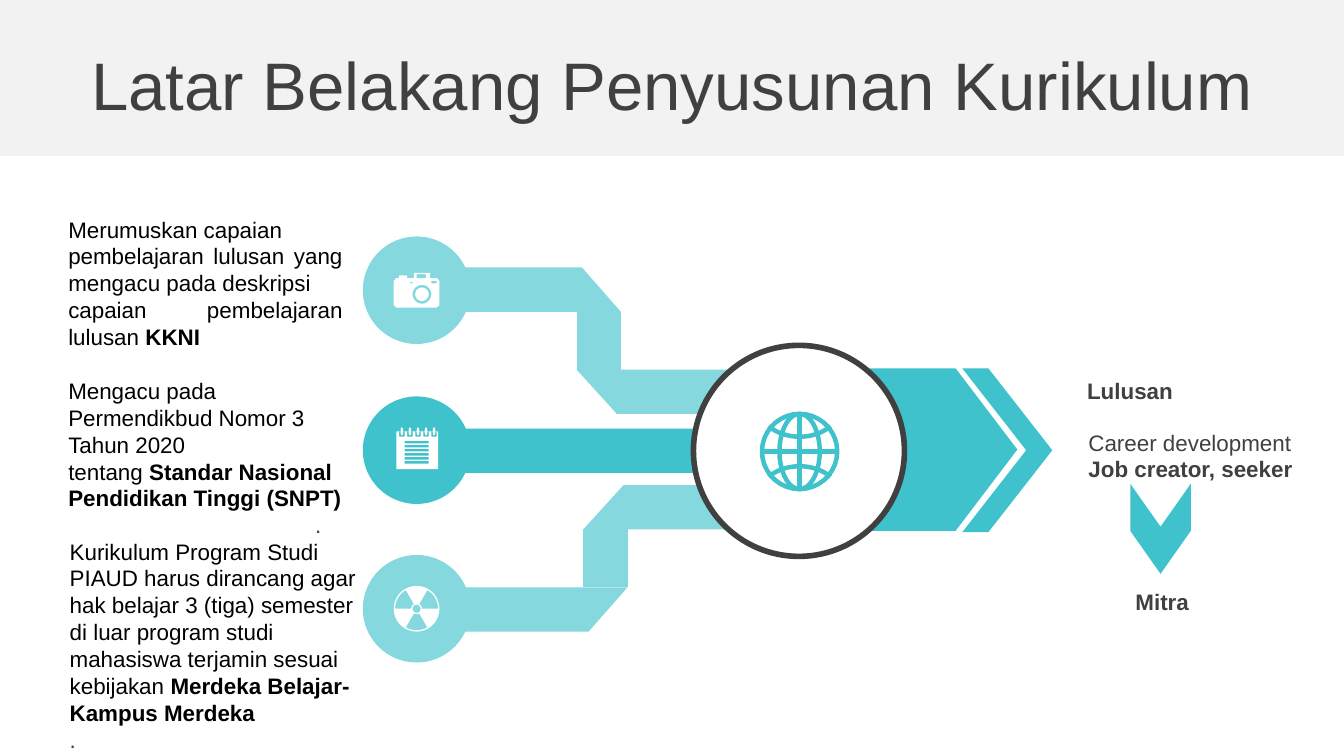
"""Build the slide on the background to the curriculum design."""
import math

import pptx
import pptx.dml.color
import pptx.enum.shapes
import pptx.enum.text
import pptx.util

Inches = pptx.util.Inches
RGBColor = pptx.dml.color.RGBColor
SHAPE = pptx.enum.shapes.MSO_SHAPE
ALIGN = pptx.enum.text.PP_ALIGN

BAND = RGBColor(0xF2, 0xF2, 0xF2)
DARK = RGBColor(0x40, 0x40, 0x40)
BLACK = RGBColor(0, 0, 0)
WHITE = RGBColor(0xFF, 0xFF, 0xFF)
TEAL = RGBColor(0x3F, 0xC2, 0xCB)
PALE = RGBColor(0x85, 0xD8, 0xDE)


def add_text(paragraph, text, size=12, color=BLACK, bold=False, font="Arial"):
    run = paragraph.add_run()
    run.text = text
    run.font.name = font
    run.font.size = pptx.util.Pt(size)
    run.font.bold = bold
    run.font.color.rgb = color


def arc(x, y, rx, ry, start=0, sweep=360, steps=36):
    angles = [math.radians(start + sweep * i / steps) for i in range(steps + 1)]
    return [(x + rx * math.cos(a), y + ry * math.sin(a)) for a in angles]


def box(left, top, right, bottom, cut=0):
    return [(left + cut, top), (right - cut, top), (right, top + cut), (right, bottom - cut),
            (right - cut, bottom), (left + cut, bottom), (left, bottom - cut), (left, top + cut)]


class Deck:
    def __init__(self):
        self.presentation = pptx.Presentation()
        self.presentation.slide_width = Inches(10)
        self.presentation.slide_height = Inches(10) * 9 // 16
        self.slide = self.presentation.slides.add_slide(self.presentation.slide_layouts[5])

    def paint(self, shape, fill, line=None, width=0):
        shape.shadow.inherit = False
        if fill is None:
            shape.fill.background()
        else:
            shape.fill.solid()
            shape.fill.fore_color.rgb = fill
        if line is None:
            shape.line.fill.background()
        else:
            shape.line.color.rgb = line
            shape.line.width = pptx.util.Pt(width)
        return shape

    def shape(self, kind, place, fill, adjust=None, turn=0, **outline):
        shape = self.slide.shapes.add_shape(kind, *map(Inches, place))
        if adjust is not None:
            shape.adjustments[0] = adjust
        shape.rotation = turn
        return self.paint(shape, fill, **outline)

    def freeform(self, contours, fill=None, close=True, **outline):
        contours = [[(Inches(x), Inches(y)) for x, y in points] for points in contours]
        builder = self.slide.shapes.build_freeform(*contours[0][0])
        for number, points in enumerate(contours):
            if number:
                builder.move_to(*points[0])
            builder.add_line_segments(points[1:], close=close)
        return self.paint(builder.convert_to_shape(), fill, **outline)

    def title(self, text):
        title = self.slide.shapes.title
        title.left, title.top, title.width, title.height = map(Inches, (0, 0.31, 10, 0.63))
        frame = title.text_frame
        frame.auto_size = pptx.enum.text.MSO_AUTO_SIZE.NONE
        frame.vertical_anchor = pptx.enum.text.MSO_ANCHOR.MIDDLE
        frame.paragraphs[0].alignment = ALIGN.CENTER
        add_text(frame.paragraphs[0], text, size=36, color=DARK)
        band = self.shape(SHAPE.RECTANGLE, (0, 0, 10, 1.16), BAND)
        title.element.addprevious(band.element)

    def text(self, place, paragraphs, align=ALIGN.LEFT):
        frame = self.slide.shapes.add_textbox(*map(Inches, place)).text_frame
        frame.word_wrap = True
        frame.vertical_anchor = pptx.enum.text.MSO_ANCHOR.MIDDLE
        for number, runs in enumerate(paragraphs):
            paragraph = frame.add_paragraph() if number else frame.paragraphs[0]
            paragraph.alignment = align
            for text, style in runs:
                add_text(paragraph, text, **style)
        return frame

    def arm(self, start, knee, end, flip=False):
        def level(y):
            return 6.69 - y if flip else y

        corners = [
            [(start, 1.99), (knee + 0.04, 1.99), (knee + 0.33, 2.32), (start, 2.32)],
            [(knee, 2.32), (knee + 0.33, 2.32), (knee + 0.33, 2.75), (knee, 2.75)],
            [(knee, 2.75), (end, 2.75), (end, 3.08), (knee + 0.3, 3.08)],
        ]
        for points in corners:
            self.freeform([[(x, level(y)) for x, y in points]], PALE)

    def notepad(self):
        contours = [box(2.95, 3.21, 3.26, 3.49)]
        contours += [box(3.01, 3.28 + 0.03 * i, 3.19, 3.3 + 0.03 * i) for i in range(6)]
        for i in range(5):
            x = 2.99 + 0.06 * i
            contours.append(box(x - 0.02, 3.21, x + 0.02, 3.25))
            contours.append(arc(x, 3.21, 0.01, 0.03))
        self.freeform(contours, WHITE)

    def radiation(self):
        x, y = 3.1, 4.53
        contours = [arc(x, y, 0.17, 0.17), arc(x, y, 0.03, 0.03)]
        for start in (-60, 60, 180):
            contours.append(arc(x, y, 0.16, 0.16, start, 60)
                            + arc(x, y, 0.04, 0.04, start + 60, -60))
        self.freeform(contours, WHITE)

    def camera(self):
        lens = (3.14, 2.19)
        self.freeform([
            box(2.93, 2.07, 3.27, 2.29, 0.02), arc(*lens, 0.07, 0.07), arc(*lens, 0.05, 0.05),
            box(3.05, 2.1, 3.07, 2.11), box(3.21, 2.09, 3.25, 2.11),
            box(2.97, 2.05, 3.03, 2.07), box(3.08, 2.03, 3.2, 2.07), box(3.1, 2.04, 3.17, 2.07),
        ], WHITE)

    def globe(self):
        x, y, r = 5.95, 3.36, 0.28
        self.freeform([
            arc(x, y, r, r), arc(x, y, 0.15, r),
            [(x - r, y), (x + r, y)], [(x, y - r), (x, y + r)],
            arc(x, y - 0.33, 0.3, 0.22, 40, 100), arc(x, y + 0.33, 0.3, 0.22, 220, 100),
        ], close=False, line=TEAL, width=2.4)


def main():
    deck = Deck()
    deck.title("Latar Belakang Penyusunan Kurikulum")

    deck.arm(3.46, 4.29, 5.55)
    deck.arm(3.41, 4.34, 5.5, flip=True)
    for top, color in ((1.76, PALE), (2.95, TEAL), (4.13, PALE)):
        deck.shape(SHAPE.OVAL, (2.7, top, 0.8, 0.8), color)
    deck.notepad()
    deck.radiation()
    deck.camera()

    plain, strong = {}, {"bold": True}
    gray, gray_strong = {"color": DARK}, {"color": DARK, "bold": True}
    deck.text((0.41, 1.55, 2.24, 1.11), [
        [("Merumuskan capaian", plain)],
        [("pembelajaran lulusan yang mengacu pada deskripsi", plain)],
        [("capaian pembelajaran lulusan ", plain), ("KKNI", strong)],
    ], align=ALIGN.JUSTIFY)
    regulation = deck.text((0.41, 2.85, 2.26, 1.11), [
        [("Mengacu pada Permendikbud Nomor 3 Tahun 2020", plain)],
        [("tentang ", plain), ("Standar Nasional Pendidikan Tinggi (SNPT)", strong)],
        [(".", gray)],
    ])
    full_stop = regulation.paragraphs[-1]
    full_stop.alignment = ALIGN.RIGHT
    full_stop._p.get_or_add_pPr().set("marR", str(Inches(0.18)))
    deck.text((0.42, 3.94, 2.41, 1.72), [
        [("Kurikulum Program Studi", plain)],
        [("PIAUD harus dirancang agar hak belajar 3 (tiga) semester di luar program studi "
          "mahasiswa terjamin sesuai kebijakan ", plain),
         ("Merdeka Belajar-Kampus Merdeka", strong)],
        [(".", gray)],
    ])

    deck.shape(SHAPE.PENTAGON, (6.34, 2.74, 1.23, 1.21), TEAL, adjust=0.38)
    deck.shape(SHAPE.RECTANGLE, (3.43, 3.19, 2.11, 0.33), TEAL)
    deck.shape(SHAPE.OVAL, (5.16, 2.57, 1.57, 1.57), WHITE, line=DARK, width=3)
    deck.shape(SHAPE.CHEVRON, (7.16, 2.74, 0.67, 1.22), TEAL, adjust=0.71)
    deck.text((8, 3.14, 1.81, 0.5), [
        [("Career development", gray)], [("Job creator, seeker", gray_strong)],
    ])
    deck.text((7.99, 2.76, 1.65, 0.3), [[("Lulusan", gray_strong)]])
    deck.globe()
    deck.shape(SHAPE.CHEVRON, (8.3, 3.71, 0.67, 0.45), TEAL, adjust=0.71, turn=90)
    deck.text((8.35, 4.33, 1.65, 0.3), [[("Mitra", gray_strong)]])
    deck.presentation.save("out.pptx")


if __name__ == "__main__":
    main()
